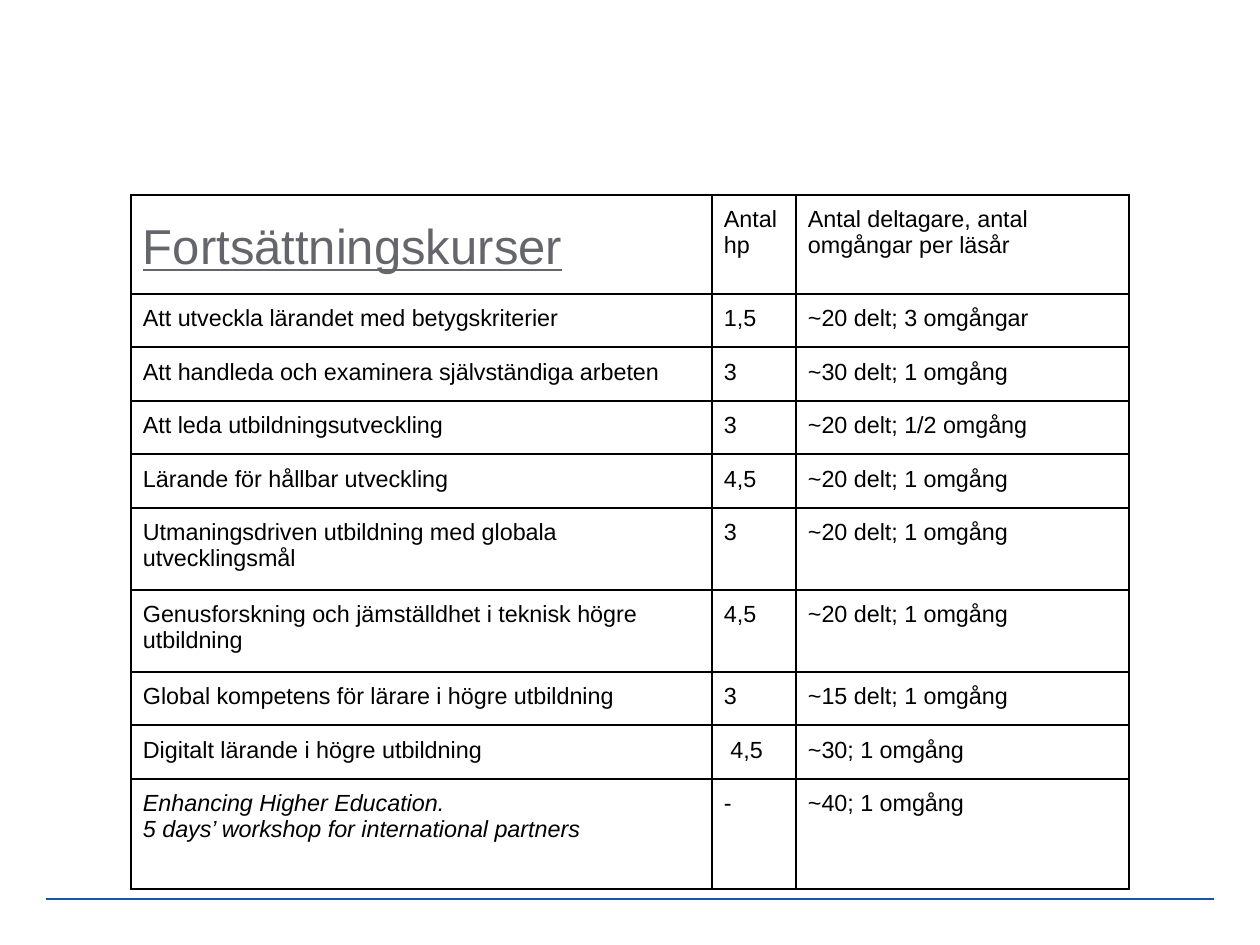
from copy import deepcopy
from dataclasses import dataclass

import pptx
import pptx.dml.color
import pptx.oxml
import pptx.oxml.ns
import pptx.util

Pt = pptx.util.Pt
qn = pptx.oxml.ns.qn

COLORS = {"text": "000000", "heading": "65656C", "rule": "1954A6"}
BODY = {"name": "Arial", "size": Pt(10), "italic": False, "underline": False}
HEADING = {**BODY, "size": Pt(21), "underline": True}
ITALIC = {**BODY, "italic": True}
MARGINS = {f"margin_{side}": Pt(5.1) for side in ("left", "top", "right", "bottom")}
TABLE_LEFT, TABLE_TOP = 56.2, 83.6
COLUMN_WIDTHS = [249, 36, 142.6]
HEADER_HEIGHT, SINGLE, DOUBLE, LAST_HEIGHT = 42.4, 22.95, 35.15, 47.2


@dataclass
class Course:
    name: str
    credits: str
    attendance: str
    height: float = SINGLE


HEADER = Course("Fortsättningskurser", "Antal hp",
                "Antal deltagare, antal omgångar per läsår", HEADER_HEIGHT)
WORKSHOP = Course("Enhancing Higher Education.\n5 days’ workshop for international partners",
                  "-", "~40; 1 omgång", LAST_HEIGHT)
ROWS = [
    HEADER,
    Course("Att utveckla lärandet med betygskriterier", "1,5", "~20 delt; 3 omgångar"),
    Course("Att handleda och examinera självständiga arbeten", "3", "~30 delt; 1 omgång"),
    Course("Att leda utbildningsutveckling", "3", "~20 delt; 1/2 omgång"),
    Course("Lärande för hållbar utveckling", "4,5", "~20 delt; 1 omgång"),
    Course("Utmaningsdriven utbildning med globala utvecklingsmål", "3",
           "~20 delt; 1 omgång", DOUBLE),
    Course("Genusforskning och jämställdhet i teknisk högre utbildning", "4,5",
           "~20 delt; 1 omgång", DOUBLE),
    Course("Global kompetens för lärare i högre utbildning", "3", "~15 delt; 1 omgång"),
    Course("Digitalt lärande i högre utbildning", " 4,5", "~30; 1 omgång"),
    WORKSHOP,
]


def rgb(name: str) -> pptx.dml.color.RGBColor:
    return pptx.dml.color.RGBColor.from_string(COLORS[name])


def set_attributes(target: object, values: dict) -> None:
    for name, value in values.items():
        setattr(target, name, value)


def add_borders(cell) -> None:
    tc_pr = cell._tc.get_or_add_tcPr()
    for side in ("lnL", "lnR", "lnT", "lnB"):
        tc_pr.append(pptx.oxml.parse_xml(
            f'<a:{side} {pptx.oxml.ns.nsdecls("a")} w="{Pt(1)}"><a:solidFill>'
            f'<a:srgbClr val="{COLORS["text"]}"/></a:solidFill></a:{side}>'))


def fill_cell(cell, text: str, font: dict, color: str, spacing: float) -> None:
    set_attributes(cell, MARGINS)
    add_borders(cell)
    cell.fill.background()
    p = cell.text_frame.paragraphs[0]
    p.text = text
    p.line_spacing = spacing
    for r in p.runs:
        set_attributes(r.font, font)
        r.font.color.rgb = rgb(color)
    for line_break in p._p.findall(qn("a:br")):
        line_break.append(deepcopy(p.runs[0]._r.rPr))


def add_course_table(s) -> None:
    height = sum(course.height for course in ROWS)
    frame = s.shapes.add_table(len(ROWS), len(COLUMN_WIDTHS), Pt(TABLE_LEFT), Pt(TABLE_TOP),
                               Pt(sum(COLUMN_WIDTHS)), Pt(height))
    table = frame.table
    set_attributes(table, {"first_row": False, "horz_banding": False})
    for column, width in zip(table.columns, COLUMN_WIDTHS):
        column.width = Pt(width)
    for row, course in zip(table.rows, ROWS):
        row.height = Pt(course.height)
        name, credits, attendance = row.cells
        if course is HEADER:
            fill_cell(name, course.name, HEADING, "heading", 1.25)
        else:
            fill_cell(name, course.name, ITALIC if course is WORKSHOP else BODY, "text", 1.0)
        fill_cell(credits, course.credits, BODY, "text", 1.0)
        fill_cell(attendance, course.attendance, BODY, "text", 1.0)


def add_footer_rule(s) -> None:
    rule = s.shapes.add_connector(pptx.enum.shapes.MSO_CONNECTOR.STRAIGHT,
                                  Pt(19.6), Pt(385.2), Pt(520.4), Pt(385.2))
    rule.line.color.rgb = rgb("rule")
    rule.line.width = Pt(1)
    rule._element.spPr.append(
        pptx.oxml.parse_xml(f'<a:effectLst {pptx.oxml.ns.nsdecls("a")}/>'))


def main() -> None:
    prs = pptx.Presentation()
    prs.slide_width, prs.slide_height = Pt(540), Pt(405)
    s = prs.slides.add_slide(prs.slide_layouts[6])
    add_footer_rule(s)
    add_course_table(s)
    prs.save("out.pptx")


if __name__ == "__main__":
    main()
